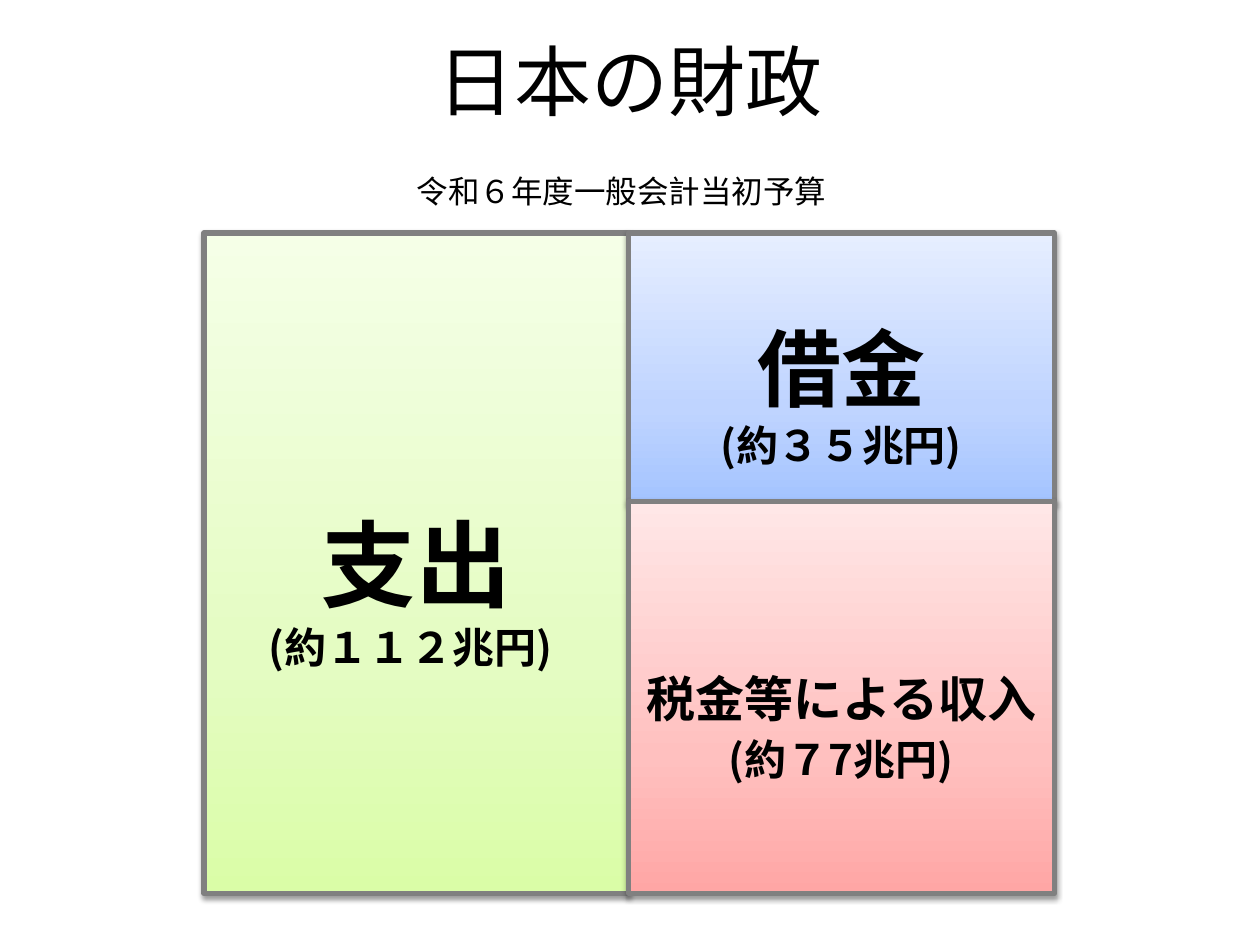
from lxml.etree import SubElement
from pptx import Presentation
from pptx.dml.color import RGBColor
from pptx.enum.shapes import MSO_SHAPE
from pptx.enum.text import MSO_ANCHOR, PP_ALIGN
from pptx.oxml.ns import qn
from pptx.util import Inches, Pt

FONT = "Noto Sans CJK JP"


def color(value):
    return RGBColor.from_string(value)


def write(shape, text, size, bold=False, anchor=MSO_ANCHOR.TOP, align=PP_ALIGN.CENTER):
    frame = shape.text_frame
    frame.word_wrap = True
    frame.vertical_anchor = anchor
    paragraph = frame.paragraphs[0]
    paragraph.alignment = align
    run = paragraph.add_run()
    run.text = text
    font_format = {"name": FONT, "size": Pt(size), "bold": bold}
    for attribute, value in font_format.items():
        setattr(run.font, attribute, value)
    run.font.color.rgb = color("000000")
    # East Asian characters take their own typeface
    SubElement(run.font._element, qn("a:ea"), typeface=FONT)


presentation = Presentation()
presentation.slide_width = Inches(10)
presentation.slide_height = Inches(7.5)
slide = presentation.slides.add_slide(presentation.slide_layouts[6])

# Budget boxes: spending on the left, borrowing and tax revenue on the right
left, middle, right = 1.62, 4.99, 8.37
top, split, bottom = 1.85, 3.98, 7.09
boxes = [
    ("支出", 54, left, top, middle, bottom, ("DAFDA7", "E4FCC2", "F5FFE7")),
    ("借金", 48, middle, top, right, split, ("A4C4FF", "BFD4FF", "E6EEFF")),
    ("税金等による収入", 28, middle, split, right, bottom, ("FFA6A5", "FFC0BF", "FFE7E7")),
]
for text, size, x1, y1, x2, y2, stops in boxes:
    box = slide.shapes.add_shape(
        MSO_SHAPE.RECTANGLE, Inches(x1), Inches(y1), Inches(x2 - x1), Inches(y2 - y1))
    box.line.color.rgb = color("808080")
    box.line.width = Pt(3)

    # Three-stop gradient rising from the bottom edge
    box.fill.gradient()
    box.fill.gradient_angle = 90
    stop_list = box._element.spPr.find(".//" + qn("a:gsLst"))
    stop_list.clear()
    for position, value in zip((0, 35, 100), stops):
        stop = SubElement(stop_list, qn("a:gs"), pos=str(position * 1000))
        SubElement(stop, qn("a:srgbClr"), val=value)

    # Soft shadow below the box
    box.shadow.inherit = False
    effects = box._element.spPr.find(qn("a:effectLst"))
    shadow = SubElement(effects, qn("a:outerShdw"), blurRad=str(Pt(3.1)),
                        dist=str(Pt(1.6)), dir="5400000", rotWithShape="0")
    shadow_color = SubElement(shadow, qn("a:srgbClr"), val="000000")
    SubElement(shadow_color, qn("a:alpha"), val="38000")

    write(box, text, size, bold=True, anchor=MSO_ANCHOR.MIDDLE)

# Title, subtitle and amounts
labels = [
    ("日本の財政", 0, 0, 10, 1.27, 44, False, MSO_ANCHOR.MIDDLE, PP_ALIGN.CENTER),
    ("令和６年度一般会計当初予算", 3.21, 1.32, 3.61, 0.4, 18, False, MSO_ANCHOR.TOP, PP_ALIGN.LEFT),
    ("(約１１２兆円)", 1.93, 4.88, 2.65, 0.5, 24, True, MSO_ANCHOR.TOP, PP_ALIGN.CENTER),
    ("(約３５兆円)", 5.31, 3.28, 2.73, 0.5, 24, True, MSO_ANCHOR.TOP, PP_ALIGN.CENTER),
    ("(約７7兆円)", 5.31, 5.77, 2.73, 0.5, 24, True, MSO_ANCHOR.TOP, PP_ALIGN.CENTER),
]
for text, x, y, width, height, size, bold, anchor, align in labels:
    label = slide.shapes.add_textbox(Inches(x), Inches(y), Inches(width), Inches(height))
    write(label, text, size, bold, anchor, align)

presentation.save("out.pptx")
